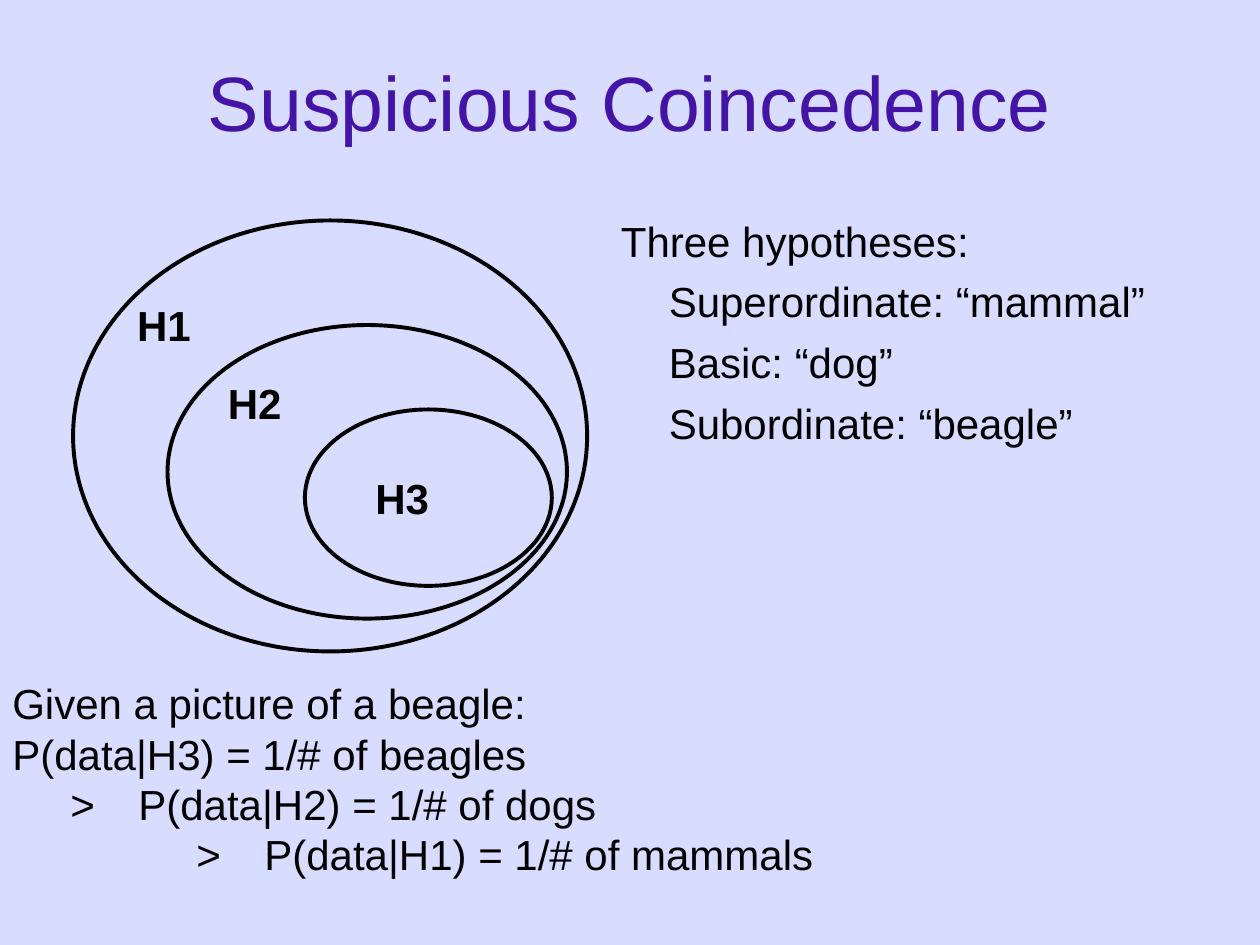
from pptx import Presentation
from pptx.dml.color import RGBColor
from pptx.enum.shapes import MSO_SHAPE
from pptx.enum.text import MSO_ANCHOR, PP_ALIGN
from pptx.util import Inches, Pt

COLORS = {"bg": "D8DCFF", "title": "4414A7", "ink": "000000"}


def add_text(s, box, lines, size=24, color="ink", bold=False, space=0):
    tf = s.shapes.add_textbox(*[Inches(v) for v in box]).text_frame
    tf.word_wrap = True
    for i, (text, left, hang) in enumerate(lines):
        p = tf.paragraphs[0] if i == 0 else tf.add_paragraph()
        pPr = p._p.get_or_add_pPr()
        pPr.set("marL", str(Inches(left)))
        pPr.set("indent", str(Inches(-hang)))
        if i:
            p.space_before = Pt(space)
        r = p.add_run()
        r.text = text
        r.font.name = "Arial"
        r.font.size = Pt(size)
        r.font.bold = bold
        r.font.color.rgb = RGBColor.from_string(COLORS[color])
    return tf


prs = Presentation()
prs.slide_width, prs.slide_height = Inches(10), Inches(7.5)
s = prs.slides.add_slide(prs.slide_layouts[6])
s.background.fill.solid()
s.background.fill.fore_color.rgb = RGBColor.from_string(COLORS["bg"])

title = add_text(s, (0.75, 0.17, 8.5, 1.25), [("Suspicious Coincedence", 0, 0)], 44, "title")
title.vertical_anchor = MSO_ANCHOR.MIDDLE
title.paragraphs[0].alignment = PP_ALIGN.CENTER

hypotheses = [
    ("Three hypotheses:", 0, 0),
    ("Superordinate: “mammal”", 0.38, 0),
    ("Basic: “dog”", 0.38, 0),
    ("Subordinate: “beagle”", 0.38, 0),
]
add_text(s, (4.83, 1.66, 5.17, 5.09), hypotheses, space=5.8)

ellipses = [
    (0.58, 1.75, 4.08, 3.42),
    (1.33, 2.58, 3.17, 2.33),
    (2.42, 3.25, 1.96, 1.4),
]
for box in ellipses:
    sp = s.shapes.add_shape(MSO_SHAPE.OVAL, *[Inches(v) for v in box])
    sp.shadow.inherit = False
    sp.fill.solid()
    sp.fill.fore_color.rgb = RGBColor.from_string(COLORS["bg"])
    sp.line.color.rgb = RGBColor.from_string(COLORS["ink"])
    sp.line.width = Pt(2.25)

for label, x, y in [("H1", 0.99, 2.33), ("H2", 1.71, 2.95), ("H3", 2.88, 3.7)]:
    add_text(s, (x, y, 0.92, 0.5), [(label, 0, 0)], bold=True)

likelihoods = [
    ("Given a picture of a beagle:", 0, 0),
    ("P(data|H3) = 1/# of beagles", 0, 0),
    (">\tP(data|H2) = 1/# of dogs", 1, 0.54),
    (">\tP(data|H1) = 1/# of mammals", 2, 0.54),
]
add_text(s, (0, 5.33, 10, 1.72), likelihoods)

prs.save("out.pptx")
